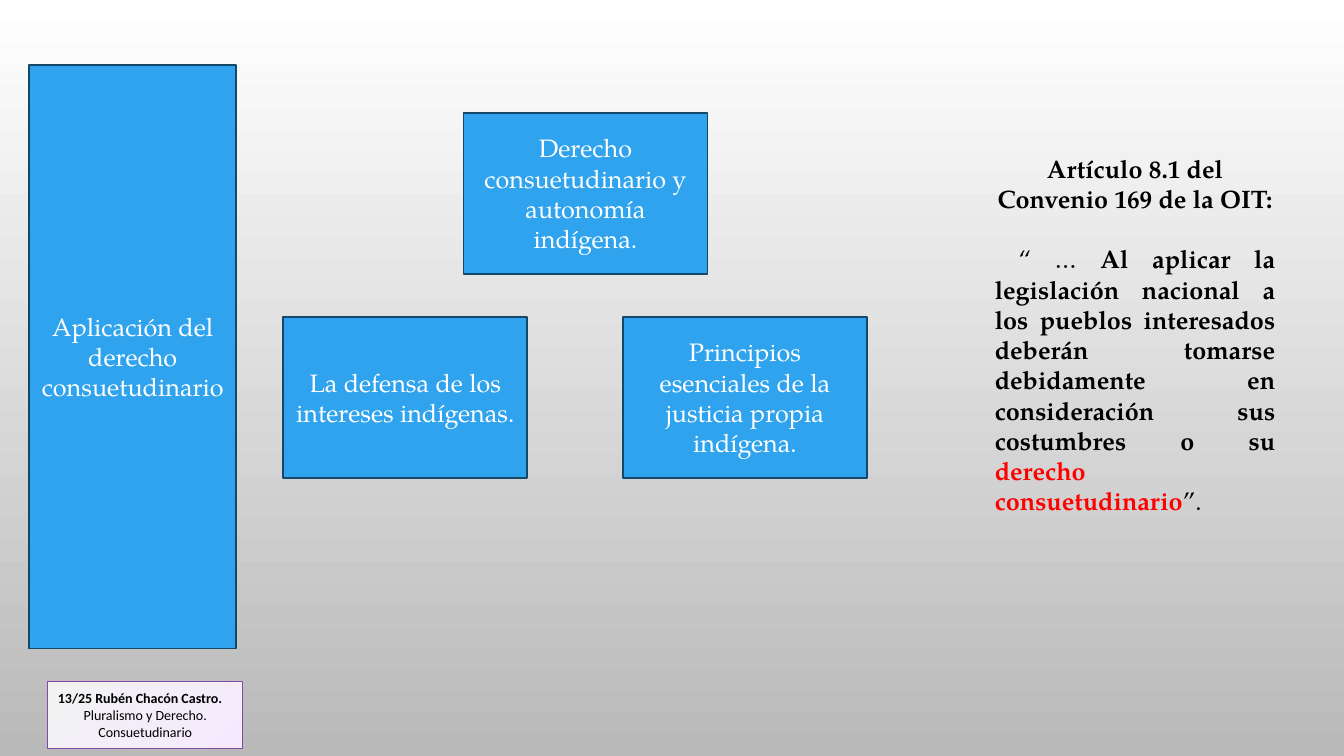
import pptx
import pptx.dml.color
import pptx.enum.shapes
import pptx.enum.text
import pptx.util

Cm = pptx.util.Cm
Pt = pptx.util.Pt
RGBColor = pptx.dml.color.RGBColor
ALIGN = pptx.enum.text.PP_ALIGN
ANCHOR = pptx.enum.text.MSO_ANCHOR

WHITE = RGBColor(0xFF, 0xFF, 0xFF)
BLACK = RGBColor(0x00, 0x00, 0x00)
RED = RGBColor(0xFF, 0x00, 0x00)
GREY = RGBColor(0xB9, 0xB9, 0xB9)
BLUE = RGBColor(0x2F, 0xA3, 0xEE)
NAVY = RGBColor(0x15, 0x47, 0x68)
PURPLE = RGBColor(0x83, 0x4A, 0xA7)
PALE_GREY = RGBColor(0xF2, 0xF2, 0xF2)
PALE_LILAC = RGBColor(0xF4, 0xE9, 0xFF)

SERIF = "TeX Gyre Pagella"
SANS = "Calibri"


def add_span(para, text, font=SERIF, size=18, color=BLACK, bold=False):
    span = para.add_run()
    span.text = text
    span.font.name = font
    span.font.size = Pt(size)
    span.font.color.rgb = color
    span.font.bold = bold


def set_gradient(fill, start, end, angle):
    fill.gradient()
    fill.gradient_angle = angle
    for stop, color in zip(fill.gradient_stops, (start, end)):
        stop.color.rgb = color


def add_rectangle(page, left, top, width, height, line_color, line_width):
    box = page.shapes.add_shape(
        pptx.enum.shapes.MSO_SHAPE.RECTANGLE,
        Cm(left), Cm(top), Cm(width), Cm(height))
    box.shadow.inherit = False
    box.line.color.rgb = line_color
    box.line.width = Pt(line_width)
    box.text_frame.word_wrap = True
    box.text_frame.vertical_anchor = ANCHOR.MIDDLE
    return box


def add_topic(page, text, left, top, width, height):
    box = add_rectangle(page, left, top, width, height, NAVY, 1.25)
    box.fill.solid()
    box.fill.fore_color.rgb = BLUE
    para = box.text_frame.paragraphs[0]
    para.alignment = ALIGN.CENTER
    add_span(para, text, color=WHITE)


def add_topic_triangle(page, left, top, width, height):
    topic_width, topic_height = 6.15, 4.06
    right = left + width - topic_width
    bottom = top + height - topic_height
    topics = (
        ("Principios esenciales de la justicia propia indígena.", right, bottom),
        ("La defensa de los intereses indígenas.", left, bottom),
        ("Derecho consuetudinario y autonomía indígena.", left + 4.54, top),
    )
    for text, topic_left, topic_top in topics:
        add_topic(page, text, topic_left, topic_top, topic_width, topic_height)


def add_article(page, left, top, width, height):
    box = page.shapes.add_textbox(Cm(left), Cm(top), Cm(width), Cm(height))
    frame = box.text_frame
    frame.word_wrap = True
    heading = frame.paragraphs[0]
    heading.alignment = ALIGN.CENTER
    add_span(heading, "Artículo 8.1 del Convenio 169 de la OIT:", bold=True)
    quote = frame.add_paragraph()
    quote.alignment = ALIGN.JUSTIFY
    quote.space_before = Pt(21.6)
    quote._p.get_or_add_pPr().set("indent", str(Cm(0.6)))
    add_span(quote, "“ … ")
    add_span(quote, "Al aplicar la legislación nacional a los pueblos interesados "
             "deberán tomarse debidamente en consideración sus costumbres o su ",
             bold=True)
    add_span(quote, "derecho consuetudinario", color=RED, bold=True)
    add_span(quote, "”.")


def add_credit(page, left, top, width, height):
    box = add_rectangle(page, left, top, width, height, PURPLE, 0.75)
    set_gradient(box.fill, PALE_GREY, PALE_LILAC, 315)
    author = box.text_frame.paragraphs[0]
    author.alignment = ALIGN.LEFT
    add_span(author, "13/25 Rubén Chacón Castro.", font=SANS, size=10, bold=True)
    subject = box.text_frame.add_paragraph()
    subject.alignment = ALIGN.CENTER
    add_span(subject, "Pluralismo y Derecho. Consuetudinario", font=SANS, size=10)


def main():
    deck = pptx.Presentation()
    deck.slide_width = Cm(33.87)
    deck.slide_height = Cm(19.05)
    page = deck.slides.add_slide(deck.slide_layouts[6])
    set_gradient(page.background.fill, WHITE, GREY, 270)
    add_credit(page, 1.21, 17.17, 4.9, 1.7)
    add_article(page, 24.82, 3.73, 7.57, 9.5)
    add_topic(page, "Aplicación del derecho consuetudinario", 0.74, 1.63, 5.21, 14.71)
    add_topic_triangle(page, 7.14, 2.84, 14.71, 9.2)
    deck.save("out.pptx")


if __name__ == "__main__":
    main()
